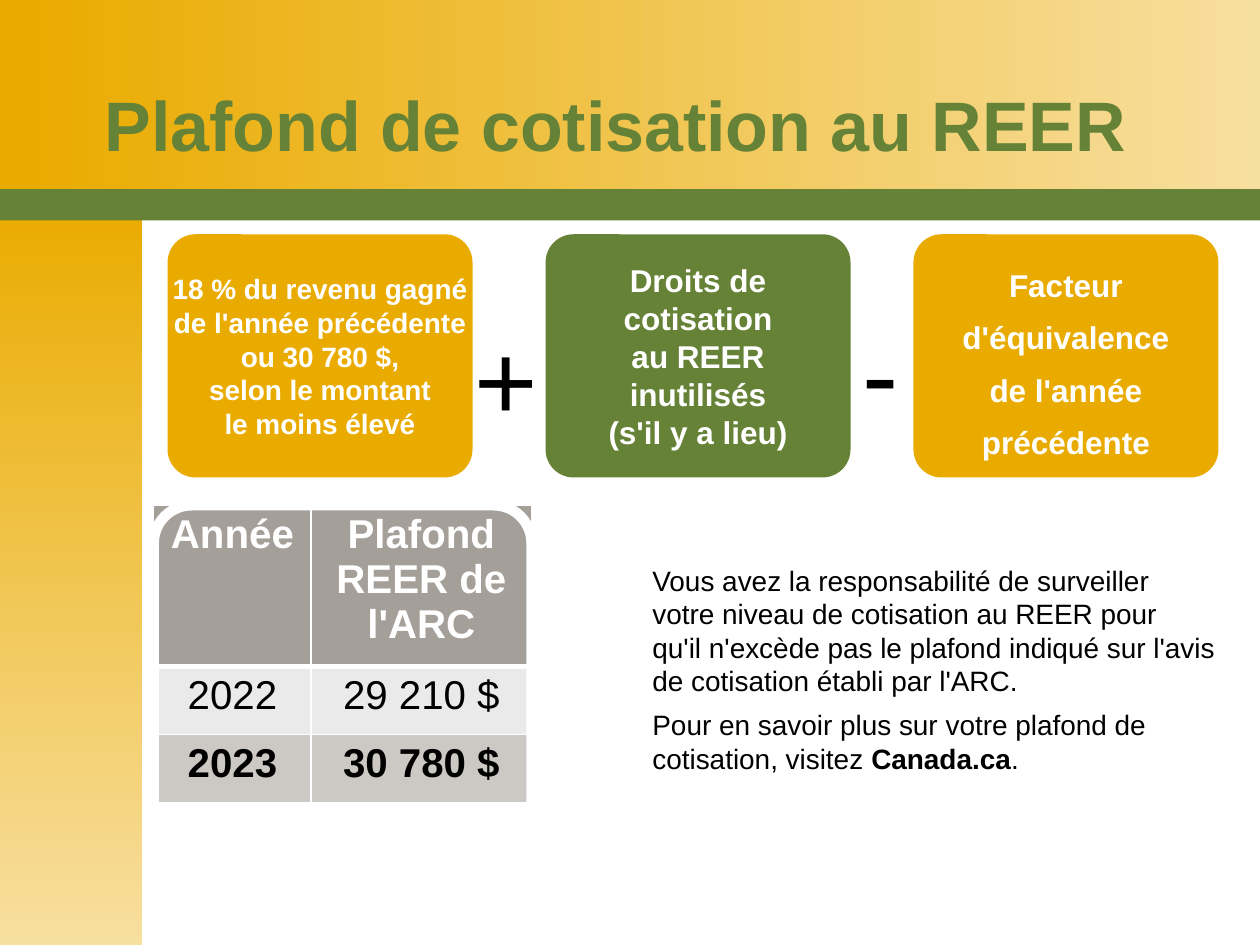
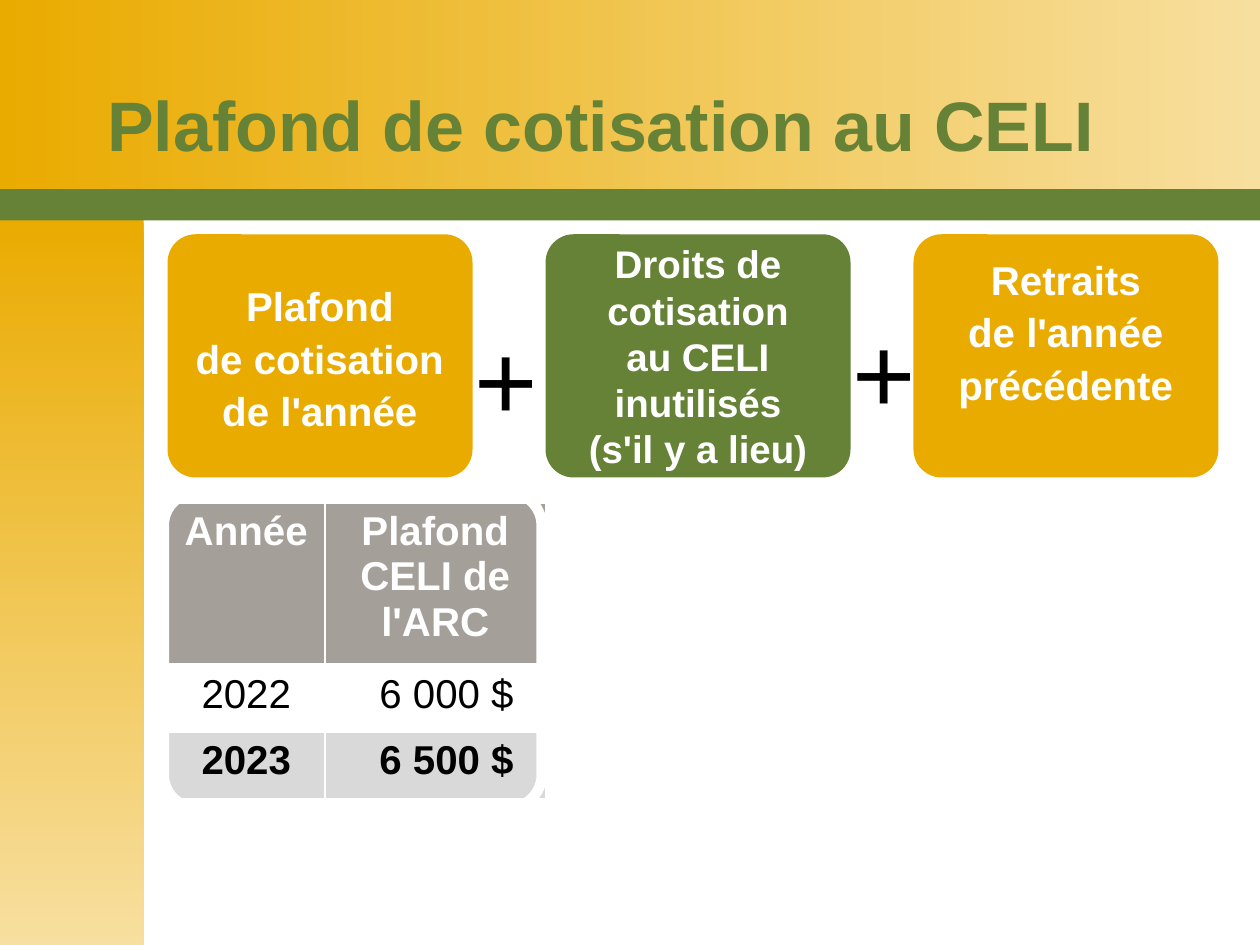
from copy import deepcopy
from dataclasses import dataclass
from typing import NamedTuple

from lxml.etree import SubElement
from pptx import Presentation
from pptx.dml.color import RGBColor
from pptx.enum.shapes import MSO_SHAPE
from pptx.enum.text import MSO_ANCHOR, MSO_AUTO_SIZE, PP_ALIGN
from pptx.oxml.ns import qn
from pptx.util import Emu, Pt

EMU_PER_PX = 9144
FONT = "Arial"
COLORS = {
    "gold": "EAAB00",
    "pale_gold": "F7DF9F",
    "green": "658237",
    "white": "FFFFFF",
    "black": "000000",
    "header_gray": "A59F99",
    "light_gray": "EAEAEA",
    "warm_gray": "CCC8C4",
    "silver": "D9D9D9",
}
TERM_LEFTS = (133, 433, 725)
TERM_FILLS = ("gold", "green", "gold")
TERM_TOP, TERM_WIDTH, TERM_HEIGHT = 186, 242, 193
TERM_ROUNDING, FRAME_ROUNDING = 0.115, 0.104
CELL_MARGIN = 10
YEAR_WIDTH, LIMIT_WIDTH = 125, 175


class Box(NamedTuple):
    left: int
    top: int
    width: int
    height: int


@dataclass(frozen=True)
class Term:
    text: str
    size: int
    line_spacing: int | None = None
    bottom_inset: int = 0


@dataclass(frozen=True)
class Operator:
    sign: str
    left: int
    top: int


@dataclass(frozen=True)
class LimitTable:
    left: int
    top: int
    row_heights: tuple[int, int, int]
    rows: tuple[tuple[str, str], ...]
    row_fills: tuple[str, str, str]
    frame: Box
    amount_indent: int = 0


@dataclass(frozen=True)
class PlanSlide:
    title: str
    title_left: int
    header_left: int
    sidebar: Box
    terms: tuple[Term, Term, Term]
    operators: tuple[Operator, Operator]
    limits: LimitTable
    advice: tuple[tuple[str, ...], ...] = ()


def px(length: int) -> Emu:
    return Emu(length * EMU_PER_PX)


def place(box: Box) -> tuple[Emu, ...]:
    return tuple(px(length) for length in box)


def color(name: str) -> RGBColor:
    return RGBColor.from_string(COLORS[name])


def format_paragraph(paragraph, size: int, ink: str, bold: bool = False) -> None:
    for run in paragraph.runs:
        run.font.name = FONT
        run.font.size = Pt(size)
        run.font.bold = bold
        run.font.color.rgb = color(ink)
    for line_break in paragraph._p.findall(qn("a:br")):
        line_break.append(deepcopy(paragraph.runs[0]._r.rPr))


def add_panel(slide, box: Box, fill: str | None, rounding: float | None = None):
    kind = MSO_SHAPE.RECTANGLE if rounding is None else MSO_SHAPE.ROUNDED_RECTANGLE
    panel = slide.shapes.add_shape(kind, *place(box))
    panel.shadow.inherit = False
    panel.line.fill.background()
    if rounding is not None:
        panel.adjustments[0] = rounding
    if fill is None:
        panel.fill.background()
    else:
        panel.fill.solid()
        panel.fill.fore_color.rgb = color(fill)
    return panel


def add_gradient(slide, box: Box, angle: int) -> None:
    fill = add_panel(slide, box, "gold").fill
    fill.gradient()
    fill.gradient_angle = angle
    for stop, name in zip(fill.gradient_stops, ("gold", "pale_gold")):
        stop.color.rgb = color(name)


def add_background(slide, plan: PlanSlide) -> None:
    add_panel(slide, Box(0, 0, 1000, 165), "gold")
    add_gradient(slide, Box(plan.header_left, 0, 1000 - plan.header_left, 155), 0)
    add_gradient(slide, plan.sidebar, 270)
    add_panel(slide, Box(0, 150, 1000, 25), "green")


def add_title(slide, plan: PlanSlide) -> None:
    title = slide.shapes.title
    title.left, title.top, title.width, title.height = place(
        Box(plan.title_left, 0, 850, 136)
    )
    slide.shapes._spTree.append(title._element)
    frame = title.text_frame
    frame.text = plan.title
    frame.auto_size = MSO_AUTO_SIZE.NONE
    frame.vertical_anchor = MSO_ANCHOR.BOTTOM
    frame.paragraphs[0].alignment = PP_ALIGN.LEFT
    format_paragraph(frame.paragraphs[0], 40, "green", True)


def add_term(slide, term: Term, left: int, fill: str) -> None:
    box = Box(left, TERM_TOP, TERM_WIDTH, TERM_HEIGHT)
    frame = add_panel(slide, box, fill, TERM_ROUNDING).text_frame
    frame.word_wrap = False
    frame.vertical_anchor = MSO_ANCHOR.MIDDLE
    frame.margin_left = frame.margin_right = frame.margin_top = 0
    frame.margin_bottom = px(term.bottom_inset)
    paragraph = frame.paragraphs[0]
    paragraph.text = term.text
    paragraph.alignment = PP_ALIGN.CENTER
    if term.line_spacing:
        paragraph.line_spacing = Pt(term.line_spacing)
    format_paragraph(paragraph, term.size, "white", True)


def add_operator(slide, operator: Operator) -> None:
    box = Box(operator.left, operator.top, 75, 108)
    frame = slide.shapes.add_textbox(*place(box)).text_frame
    frame.word_wrap = True
    frame.margin_top = 0
    frame.text = operator.sign
    format_paragraph(frame.paragraphs[0], 62, "black")


def add_advice(slide, advice: tuple[tuple[str, ...], ...]) -> None:
    frame = slide.shapes.add_textbox(*place(Box(508, 442, 484, 179))).text_frame
    frame.word_wrap = True
    for index, (lead, *rest) in enumerate(advice):
        paragraph = frame.add_paragraph() if index else frame.paragraphs[0]
        paragraph.text = lead
        for part in rest:
            paragraph.add_run().text = part
        paragraph.space_after = Pt(6)
        format_paragraph(paragraph, 16, "black")
        for emphasis in paragraph.runs[1:2] if rest else ():
            emphasis.font.bold = True


def add_borders(cell, row: int) -> None:
    widths = {"lnL": 1, "lnR": 1, "lnT": 3 if row == 1 else 1, "lnB": 1 if row else 3}
    properties = cell._tc.get_or_add_tcPr()
    for side, width in widths.items():
        border = SubElement(properties, qn(f"a:{side}"), w=str(Pt(width)))
        solid = SubElement(border, qn("a:solidFill"))
        SubElement(solid, qn("a:srgbClr"), val=COLORS["white"])


def add_limits(slide, limits: LimitTable) -> None:
    box = Box(limits.left, limits.top, YEAR_WIDTH + LIMIT_WIDTH, sum(limits.row_heights))
    table = slide.shapes.add_table(len(limits.rows), 2, *place(box)).table
    table.first_row = table.horz_banding = False
    for column, width in zip(table.columns, (YEAR_WIDTH, LIMIT_WIDTH)):
        column.width = px(width)
    for row, texts in enumerate(limits.rows):
        table.rows[row].height = px(limits.row_heights[row])
        for column, text in enumerate(texts):
            cell = table.cell(row, column)
            add_borders(cell, row)
            cell.fill.solid()
            cell.fill.fore_color.rgb = color(limits.row_fills[row])
            if row and column:
                cell.margin_left = px(CELL_MARGIN + limits.amount_indent)
            cell.text_frame.text = text
            paragraph = cell.text_frame.paragraphs[0]
            paragraph.alignment = PP_ALIGN.CENTER
            format_paragraph(paragraph, 23, "black" if row else "white", row != 1)
    frame = add_panel(slide, limits.frame, None, FRAME_ROUNDING)
    frame.line.color.rgb = color("white")
    frame.line.width = Pt(6)


def add_plan_slide(deck, plan: PlanSlide) -> None:
    slide = deck.slides.add_slide(deck.slide_layouts[5])
    add_background(slide, plan)
    add_title(slide, plan)
    for term, left, fill in zip(plan.terms, TERM_LEFTS, TERM_FILLS):
        add_term(slide, term, left, fill)
    for operator in plan.operators:
        add_operator(slide, operator)
    add_limits(slide, plan.limits)
    if plan.advice:
        add_advice(slide, plan.advice)


PLANS = (
    PlanSlide(
        title="Plafond de cotisation au REER",
        title_left=73,
        header_left=20,
        sidebar=Box(0, 162, 113, 588),
        terms=(
            Term(
                "18 % du revenu gagné\nde l'année précédente\nou 30 780 $,\n"
                "selon le montant\nle moins élevé",
                16,
            ),
            Term("Droits de\ncotisation\nau REER\ninutilisés\n(s'il y a lieu)", 18),
            Term("Facteur\nd'équivalence\nde l'année\nprécédente", 18, 30),
        ),
        operators=(Operator("+", 367, 248), Operator("-", 675, 242)),
        limits=LimitTable(
            left=122,
            top=401,
            row_heights=(128, 54, 54),
            rows=(
                ("Année", "Plafond REER de l'ARC"),
                ("2022", "29 210 $"),
                ("2023", "30 780 $"),
            ),
            row_fills=("header_gray", "light_gray", "warm_gray"),
            frame=Box(122, 401, 300, 289),
        ),
        advice=(
            (
                "Vous avez la responsabilité de surveiller\n"
                "votre niveau de cotisation au REER pour\n"
                "qu'il n'excède pas le plafond indiqué sur l'avis "
                "de cotisation établi par l'ARC.",
            ),
            (
                "Pour en savoir plus sur votre plafond de cotisation, visitez ",
                "Canada.ca",
                ".",
            ),
        ),
    ),
    PlanSlide(
        title="Plafond de cotisation au CELI",
        title_left=75,
        header_left=0,
        sidebar=Box(0, 170, 114, 580),
        terms=(
            Term("Plafond\nde cotisation\nde l'année", 23, 30),
            Term("Droits de\ncotisation\nau CELI\ninutilisés\n(s'il y a lieu)", 22),
            Term("Retraits\nde l'année\nprécédente", 23, 30, 42),
        ),
        operators=(Operator("+", 367, 248), Operator("+", 667, 242)),
        limits=LimitTable(
            left=133,
            top=399,
            row_heights=(129, 53, 53),
            rows=(
                ("Année", "Plafond CELI de l'ARC"),
                ("2022", "6 000 $"),
                ("2023", "6 500 $"),
            ),
            row_fills=("header_gray", "white", "silver"),
            frame=Box(130, 391, 300, 250),
            amount_indent=18,
        ),
    ),
)


def main() -> None:
    deck = Presentation()
    deck.slide_width, deck.slide_height = px(1000), px(750)
    for plan in PLANS:
        add_plan_slide(deck, plan)
    deck.save("out.pptx")


if __name__ == "__main__":
    main()
